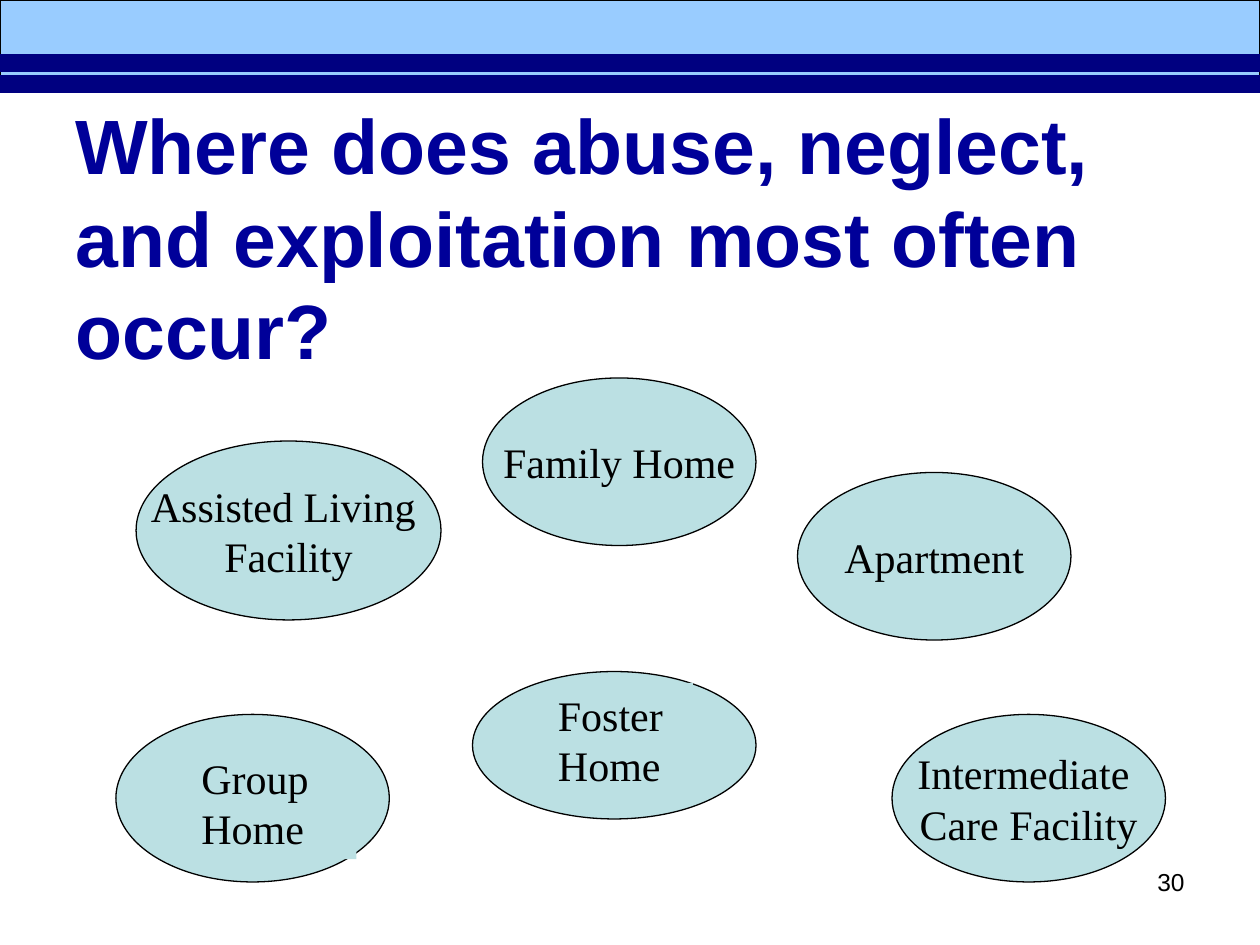
from dataclasses import dataclass
from typing import Optional

from lxml.etree import SubElement
from pptx import Presentation
from pptx.dml.color import RGBColor
from pptx.enum.shapes import MSO_CONNECTOR, MSO_SHAPE
from pptx.enum.text import MSO_ANCHOR, PP_ALIGN
from pptx.oxml.ns import qn
from pptx.util import Inches, Pt


@dataclass(frozen=True)
class Theme:
    band: str = "99CCFF"
    stripe: str = "000080"
    title: str = "000099"
    place: str = "BBE0E3"
    ink: str = "000000"
    sans: str = "Arial"
    serif: str = "Times New Roman"
    title_size: float = 44
    place_size: float = 24
    number_size: float = 14
    outline: float = 0.75
    stripe_width: float = 10.25


@dataclass(frozen=True)
class Area:
    left: float
    top: float
    width: float
    height: float

    def lengths(self) -> tuple:
        return tuple(Inches(n) for n in (self.left, self.top, self.width, self.height))


@dataclass(frozen=True)
class Place:
    area: Area
    lines: tuple = ()
    label: Optional[Area] = None


THEME = Theme()
PLACES = (
    Place(Area(1.08, 3.5, 2.42, 1.42), ("Assisted Living ", "Facility")),
    Place(Area(3.83, 3, 2.17, 1.33), ("Family Home",)),
    Place(Area(0.92, 5.67, 2.17, 1.33), ("Group Home",), Area(1.5, 5.92, 1.33, 0.9)),
    Place(Area(6.33, 3.75, 2.17, 1.33), ("Apartment",)),
    Place(Area(7.08, 5.67, 2.17, 1.33), ("Intermediate ", "Care Facility")),
    Place(Area(3.75, 5.33, 2.25, 1.17), ("Foster Home",), Area(4.33, 5.42, 1.17, 0.9)),
)


def write(box, lines: tuple, font: str, size: float, color: str, align=PP_ALIGN.LEFT,
          anchor=MSO_ANCHOR.TOP, wrap: bool = True, bold: bool = False) -> None:
    frame = box.text_frame
    frame.word_wrap = wrap
    frame.vertical_anchor = anchor
    for index, line in enumerate(lines):
        para = frame.add_paragraph() if index else frame.paragraphs[0]
        para.alignment = align
        span = para.add_run()
        span.text = line
        for name, value in {"name": font, "size": Pt(size), "bold": bold}.items():
            setattr(span.font, name, value)
        span.font.color.rgb = RGBColor.from_string(color)


def add_filled(page, kind, area: Area, fill: str, outlined: bool = True):
    shape = page.shapes.add_shape(kind, *area.lengths())
    shape.shadow.inherit = False
    shape.fill.solid()
    shape.fill.fore_color.rgb = RGBColor.from_string(fill)
    if outlined:
        shape.line.color.rgb = RGBColor.from_string(THEME.ink)
        shape.line.width = Pt(THEME.outline)
    else:
        shape.line.fill.background()
    return shape


def add_stripe(page, top: float) -> None:
    stripe = page.shapes.add_connector(
        MSO_CONNECTOR.STRAIGHT, Inches(0), Inches(top), Inches(10), Inches(top))
    stripe.line.color.rgb = RGBColor.from_string(THEME.stripe)
    stripe.line.width = Pt(THEME.stripe_width)
    SubElement(stripe._element.spPr, qn("a:effectLst"))


def add_place(page, place: Place) -> None:
    oval = add_filled(page, MSO_SHAPE.OVAL, place.area, THEME.place)
    if not place.label:
        write(oval, place.lines, THEME.serif, THEME.place_size, THEME.ink,
              PP_ALIGN.CENTER, MSO_ANCHOR.MIDDLE, wrap=False)


def add_label(page, place: Place) -> None:
    label = add_filled(page, MSO_SHAPE.RECTANGLE, place.label, THEME.place, outlined=False)
    write(label, place.lines, THEME.serif, THEME.place_size, THEME.ink)


def main() -> None:
    """Build the slide on where abuse, neglect and exploitation occur."""
    deck = Presentation()
    deck.slide_width, deck.slide_height = Inches(10), Inches(7.5)
    page = deck.slides.add_slide(deck.slide_layouts[6])
    add_filled(page, MSO_SHAPE.RECTANGLE, Area(0, 0, 10, 0.67), THEME.band)
    for top in (0.67, 0.5):
        add_stripe(page, top)
    number = page.shapes.add_textbox(*Area(7.17, 6.83, 2.33, 0.52).lengths())
    write(number, ("30",), THEME.sans, THEME.number_size, THEME.ink, PP_ALIGN.RIGHT)
    title = page.shapes.add_textbox(*Area(0.5, 1.25, 9, 1.25).lengths())
    write(title, ("Where does abuse, neglect, and exploitation most often occur?",),
          THEME.sans, THEME.title_size, THEME.title, anchor=MSO_ANCHOR.MIDDLE, bold=True)
    for place in PLACES:
        add_place(page, place)
    for place in PLACES:
        if place.label:
            add_label(page, place)
    deck.save("out.pptx")


if __name__ == "__main__":
    main()
